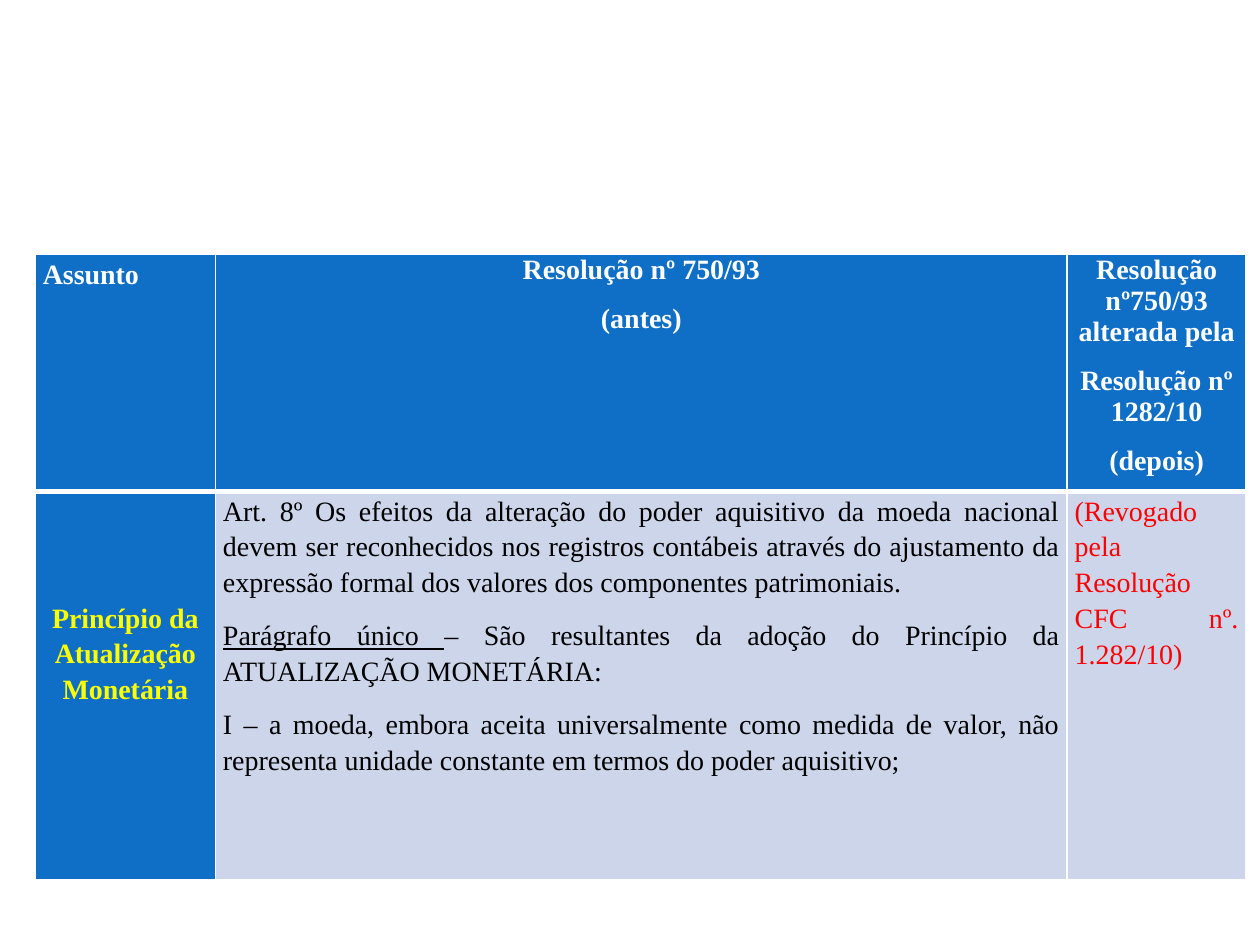
from lxml import etree
from pptx import Presentation
from pptx.dml.color import RGBColor
from pptx.enum.text import PP_ALIGN as Align
from pptx.oxml.ns import qn
from pptx.util import Inches, Pt

WHITE = RGBColor(0xFF, 0xFF, 0xFF)
BLACK = RGBColor(0x00, 0x00, 0x00)
BLUE = RGBColor(0x0F, 0x6F, 0xC6)
PALE = RGBColor(0xCC, 0xD5, 0xEA)
YELLOW = RGBColor(0xFF, 0xFF, 0x00)
RED = RGBColor(0xFF, 0x00, 0x00)


class SlideBuilder:
    font = "Times New Roman"
    size = Pt(16)
    gap = Pt(10)
    side = Inches(0.06)

    def __init__(self, slide):
        self.slide = slide

    def table(self, left, top, widths, heights):
        shape = self.slide.shapes.add_table(
            len(heights), len(widths), Inches(left), Inches(top),
            Inches(sum(widths)), Inches(sum(heights)))
        for column, width in zip(shape.table.columns, widths):
            column.width = Inches(width)
        for row, height in zip(shape.table.rows, heights):
            row.height = Inches(height)
        return shape.table

    def borders(self, cell, **widths):
        tc_pr = cell._tc.get_or_add_tcPr()
        for edge, width in widths.items():
            ln = etree.SubElement(tc_pr, qn(f"a:ln{edge}"), w=str(Pt(width)))
            fill = etree.SubElement(ln, qn("a:solidFill"))
            etree.SubElement(fill, qn("a:srgbClr"), val=str(WHITE))

    def cell(self, cell, paragraphs, fill, color, bold=False,
             align=Align.LEFT, spacing=1.15, after=gap, top=0):
        cell.fill.solid()
        cell.fill.fore_color.rgb = fill
        cell.margin_left = cell.margin_right = self.side
        cell.margin_top, cell.margin_bottom = Inches(top), 0
        tf = cell.text_frame
        for i, runs in enumerate(paragraphs):
            p = tf.add_paragraph() if i else tf.paragraphs[0]
            p.alignment = align
            p.line_spacing = spacing
            p.space_after = after
            p.font.name, p.font.size = self.font, self.size
            p.font.bold, p.font.color.rgb = bold, color
            for text, underline in runs:
                r = p.add_run()
                r.text = text
                if underline:
                    r.font.underline = True


def plain(*texts):
    return [[(text, False)] for text in texts]


def main():
    prs = Presentation()
    prs.slide_width, prs.slide_height = Inches(10), Inches(7.5)
    s = SlideBuilder(prs.slides.add_slide(prs.slide_layouts[6]))

    table = s.table(0.28, 2.02, [1.43, 6.76, 1.42], [1.88, 3.08])
    for column in range(3):
        s.borders(table.cell(0, column), L=1, R=1, T=1, B=3)
        s.borders(table.cell(1, column), L=1, R=1, T=3, B=1)

    header = dict(fill=BLUE, color=WHITE, bold=True)
    s.cell(table.cell(0, 0), plain("Assunto"), **header)
    s.cell(table.cell(0, 1), plain("Resolução nº 750/93", "(antes)"),
           align=Align.CENTER, spacing=1.0, **header)
    s.cell(table.cell(0, 2),
           plain("Resolução nº750/93 alterada pela",
                 "Resolução nº 1282/10", "(depois)"),
           align=Align.CENTER, spacing=1.0, **header)

    s.cell(table.cell(1, 0),
           plain("Princípio da", "Atualização", "Monetária"),
           BLUE, YELLOW, bold=True, align=Align.CENTER, after=0, top=0.85)
    article = plain(
        "Art. 8º Os efeitos da alteração do poder aquisitivo da moeda "
        "nacional devem ser reconhecidos nos registros contábeis através do "
        "ajustamento da expressão formal dos valores dos componentes "
        "patrimoniais.")
    article.append([
        ("Parágrafo único ", True),
        ("– São resultantes da adoção do Princípio da "
         "ATUALIZAÇÃO MONETÁRIA:", False)])
    article += plain(
        "I – a moeda, embora aceita universalmente como medida de valor, "
        "não representa unidade constante em termos do poder aquisitivo;")
    s.cell(table.cell(1, 1), article, PALE, BLACK, align=Align.JUSTIFY)
    s.cell(table.cell(1, 2),
           plain("(Revogado pela Resolução CFC nº. 1.282/10)"),
           PALE, RED, align=Align.JUSTIFY, after=0)

    prs.save("out.pptx")


if __name__ == "__main__":
    main()
